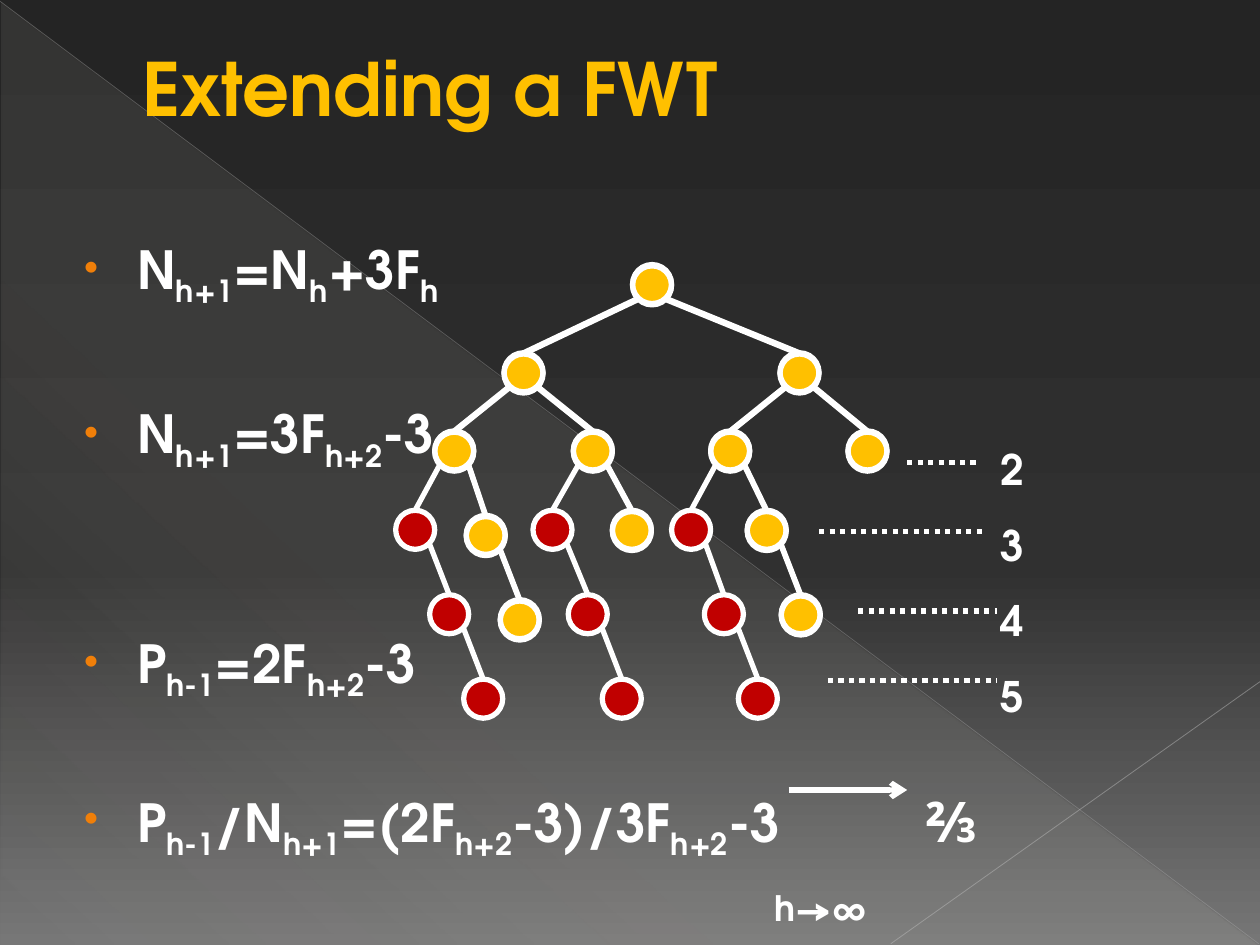
from pptx import Presentation
from pptx import util as u
from pptx.dml.color import RGBColor
from pptx.enum import dml, shapes, text
from pptx.oxml import parse_xml
from pptx.oxml.ns import qn
from lxml import etree

FONT = "TeX Gyre Adventor"
WHITE, GOLD, RED = "FFFFFF", "FFC000", "C00000"
NODE = 0.31
NS = 'xmlns:a="http://schemas.openxmlformats.org/drawingml/2006/main"'

# Every node: (x, y, parent index, belongs to the extension)
NODES = [
    (5.02, 2.10, None, False),
    (4.00, 2.80, 0, False), (6.19, 2.80, 0, False),
    (3.45, 3.42, 1, False), (4.55, 3.42, 1, False),
    (5.64, 3.42, 2, False), (6.73, 3.42, 2, False),
    (3.70, 4.09, 3, False), (4.86, 4.05, 4, False), (5.93, 4.05, 5, False),
    (3.97, 4.76, 7, False), (6.20, 4.72, 9, False),
    (3.14, 4.05, 3, True), (4.23, 4.05, 4, True), (5.33, 4.05, 5, True),
    (3.41, 4.72, 12, True), (4.51, 4.72, 13, True), (5.59, 4.72, 14, True),
    (3.68, 5.39, 15, True), (4.78, 5.39, 16, True), (5.86, 5.39, 17, True),
]

# Formulas: (space before, runs); odd runs are subscripts
FORMULAS = [
    (0, ["N", "h+1", "=N", "h", "+3F", "h"]),
    (58, ["N", "h+1", "=3F", "h+2", "-3"]),
    (95, ["P", "h-1", "=2F", "h+2", "-3"]),
    (55, ["P", "h-1", "/N", "h+1", "=(2F", "h+2", "-3)/3F", "h+2", "-3"]),
]


def color(value):
    return RGBColor.from_string(value)


def apply(target, values):
    for name, value in values.items():
        setattr(target, name, value)


def set_gradient(fill, parent, stops, angle):
    """Replace the solid fill in parent by a gradient of (position, colour, opacity)."""
    fill.solid()
    marks = "".join(
        f'<a:gs pos="{position * 1000}"><a:srgbClr val="{value}">'
        f'<a:alpha val="{opacity * 1000}"/></a:srgbClr></a:gs>'
        for position, value, opacity in stops)
    gradient = parse_xml(f'<a:gradFill {NS} rotWithShape="1"><a:gsLst>{marks}</a:gsLst>'
                         f'<a:lin ang="{angle * 60000}" scaled="0"/></a:gradFill>')
    parent.replace(parent.find(qn("a:solidFill")), gradient)


def add_line(slide, start, end, value=WHITE, width=3, opacity=100, dash=None, arrow=False):
    line = slide.shapes.add_connector(
        shapes.MSO_CONNECTOR.STRAIGHT, *map(u.Inches, (*start, *end)))
    line.line.color.rgb = color(value)
    line.line.width = u.Pt(width)
    if dash:
        line.line.dash_style = dash
    properties = line._element.spPr
    outline = properties.find(qn("a:ln"))
    if opacity < 100:
        tint = outline.find(".//" + qn("a:srgbClr"))
        etree.SubElement(tint, qn("a:alpha"), val=str(opacity * 1000))
    if arrow:
        etree.SubElement(outline, qn("a:tailEnd"), type="arrow")
    etree.SubElement(properties, qn("a:effectLst"))


def add_text_box(slide, box, wrap=True):
    frame = slide.shapes.add_textbox(*map(u.Inches, box)).text_frame
    apply(frame, {"word_wrap": wrap, "vertical_anchor": text.MSO_ANCHOR.TOP})
    return frame


def add_run(paragraph, words, size, value=WHITE, font=FONT, baseline=0):
    run = paragraph.add_run()
    run.text = words
    apply(run.font, {"name": font, "size": u.Pt(size), "bold": True})
    run.font.color.rgb = color(value)
    properties = run._r.get_or_add_rPr()
    if baseline:
        properties.set("baseline", str(baseline * 1000))
    for tag in ("a:ea", "a:cs"):
        etree.SubElement(properties, qn(tag), typeface=font)


def set_indent(paragraph, left, first=0.0):
    properties = paragraph._p.get_or_add_pPr()
    properties.set("marL", str(u.Inches(left)))
    properties.set("indent", str(u.Inches(first)))
    return properties


def add_background(slide, box):
    left, top, width, height = box
    background = slide.background.fill
    background.solid()
    set_gradient(background, slide._element.cSld.bg.bgPr,
                 [(0, "242424", 100), (60, "303030", 100), (100, "767676", 100)], 90)
    triangle = slide.shapes.add_shape(
        shapes.MSO_SHAPE.RIGHT_TRIANGLE, *map(u.Inches, (left + 0.01, top + 0.02, width - 0.02, height - 0.02)))
    triangle.shadow.inherit = False
    triangle.line.fill.background()
    set_gradient(triangle.fill, triangle._element.spPr,
                 [(0, "E3DED1", 10), (70, "E3DED1", 8), (100, "E3DED1", 1)], 133)
    add_line(slide, (left, top + 0.01), (9.99, 7.49), "B6B6B6", 0.39, 35)
    add_line(slide, (left + width, 5.41), (7.07, 7.49), "BFBFBF", 0.47, 45)


def add_title(slide, box):
    paragraph = add_text_box(slide, box).paragraphs[0]
    set_indent(paragraph, 0.53)
    add_run(paragraph, "Extending a FWT", 42, GOLD)


def add_tree(slide, drop, extended):
    """Draw the filled base tree, or its outline with the extension."""
    for x, y, parent, extension in NODES:
        if extension and not extended:
            continue
        node = slide.shapes.add_shape(
            shapes.MSO_SHAPE.OVAL, *map(u.Inches, (x, y + drop, NODE, NODE)))
        node.shadow.inherit = False
        node.line.color.rgb = color(WHITE)
        node.line.width = u.Pt(3)
        if extended and not extension:
            node.fill.background()
        else:
            node.fill.solid()
            node.fill.fore_color.rgb = color(RED if extension else GOLD)
        # An edge leaves the lower side of the parent and ends on top of the child
        if parent is not None:
            parent_x, parent_y = NODES[parent][:2]
            side = 0.04 if x < parent_x and not (extension and parent >= 12) else 0.27
            add_line(slide, (parent_x + side, parent_y + 0.27 + drop),
                     (x + NODE / 2, y + drop))


def add_levels(slide, box):
    frame = add_text_box(slide, box, wrap=False)
    for index, level in enumerate("2345"):
        paragraph = frame.paragraphs[0] if index == 0 else frame.add_paragraph()
        paragraph.line_spacing = 1.5
        add_run(paragraph, level, 24)
    for start, end, y in [(7.2, 7.76, 3.67), (6.5, 7.83, 4.22),
                          (6.81, 7.91, 4.85), (6.57, 7.91, 5.4)]:
        add_line(slide, (start, y), (end, y), dash=dml.MSO_LINE.ROUND_DOT)


def add_formulas(slide, box):
    frame = add_text_box(slide, box)
    for index, (gap, parts) in enumerate(FORMULAS):
        paragraph = frame.paragraphs[0] if index == 0 else frame.add_paragraph()
        apply(paragraph, {"line_spacing": u.Pt(36), "space_before": u.Pt(gap)})
        properties = set_indent(paragraph, 0.49, -0.42)
        for bullet in ('<a:buClr {}><a:srgbClr val="F07F09"/></a:buClr>',
                       '<a:buSzPct {} val="80000"/>', '<a:buChar {} char="•"/>'):
            properties.append(parse_xml(bullet.format(NS)))
        for position, part in enumerate(parts):
            add_run(paragraph, part, 30, baseline=-25 * (position % 2))
    # The limit stands at a tab stop, with its condition on the line below
    properties.append(parse_xml(
        f'<a:tabLst {NS}><a:tab pos="{u.Inches(6.75)}" algn="l"/></a:tabLst>'))
    add_run(paragraph, "\t", 30)
    add_run(paragraph, "⅔", 32, font="Noto Sans CJK KR")
    condition = frame.add_paragraph()
    apply(condition, {"line_spacing": u.Pt(36), "space_before": u.Pt(2)})
    set_indent(condition, 5.55)
    add_run(condition, "h→∞", 20)
    add_line(slide, (6.26, 6.27), (7.2, 6.27), arrow=True)


def main():
    presentation = Presentation()
    apply(presentation, {"slide_width": u.Inches(10), "slide_height": u.Inches(7.5)})
    slide = presentation.slides.add_slide(presentation.slide_layouts[6])
    add_background(slide, (0, 0, 10, 7.5))
    add_tree(slide, 0.01, extended=False)
    add_title(slide, (0.5, 0.29, 9, 1.53))
    add_tree(slide, 0, extended=True)
    add_levels(slide, (7.84, 3.27, 0.39, 2.45))
    add_formulas(slide, (0.5, 1.9, 9, 5))
    presentation.save("out.pptx")


if __name__ == "__main__":
    main()
